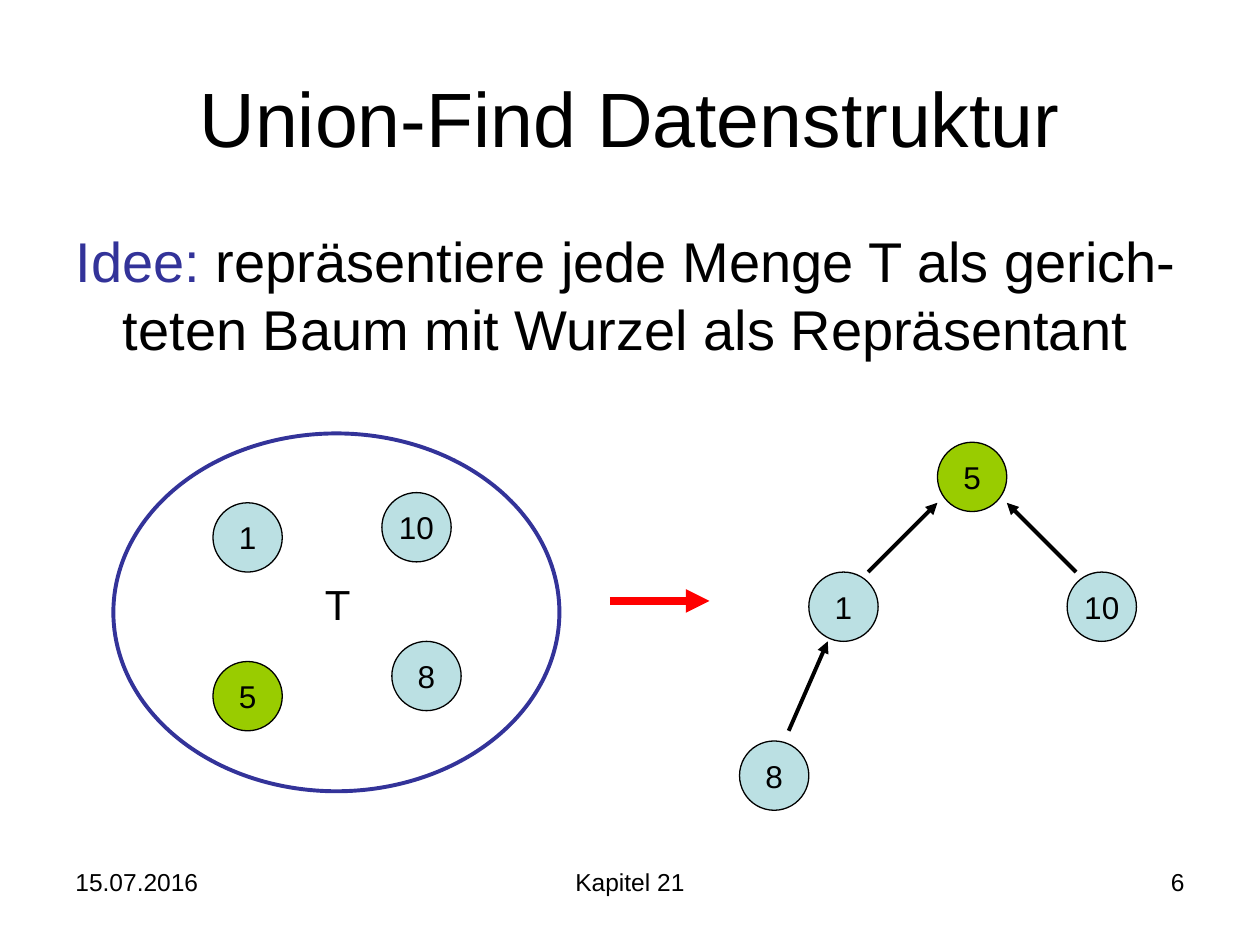
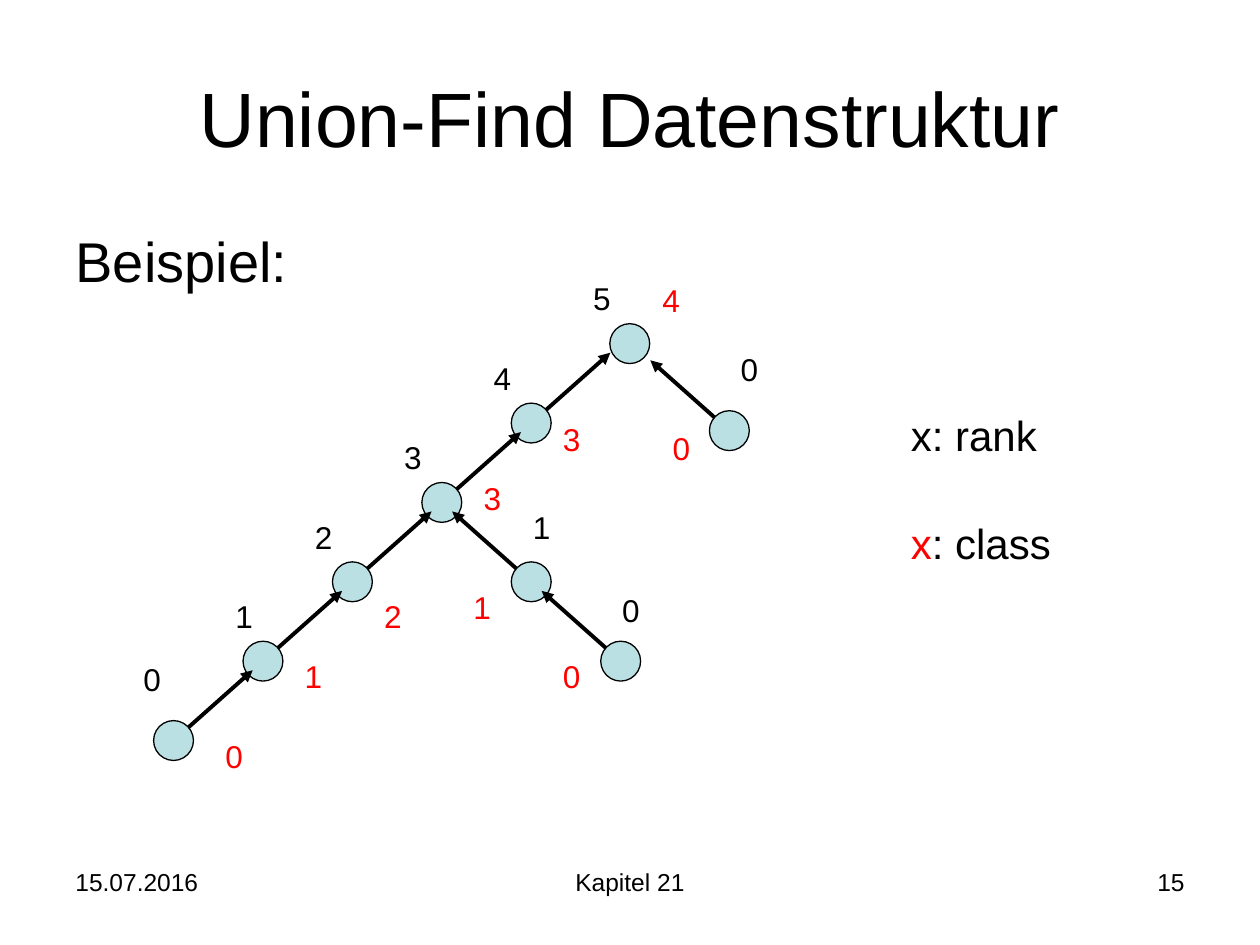
from lxml.etree import SubElement
from pptx import Presentation
from pptx.dml.color import RGBColor
from pptx.enum.shapes import MSO_CONNECTOR, MSO_SHAPE
from pptx.enum.text import MSO_ANCHOR, MSO_AUTO_SIZE, PP_ALIGN as AL
from pptx.oxml.ns import qn
from pptx.util import Pt

FONT = "Arial"
BLACK, RED, BLUE = "000000", "FF0000", "333399"
PALE, GREEN = "BBE0E3", "99CC00"
NODE, DOT = 39.6, 22.8


def rgb(color):
    return RGBColor.from_string(color)


class Deck:
    def __init__(self):
        self.prs = Presentation()
        self.prs.slide_width, self.prs.slide_height = Pt(720), Pt(540)
        self.s = None

    def fill_text(self, tf, text, size, color=BLACK, align=AL.LEFT, rest=""):
        p = tf.paragraphs[0]
        p.text = text
        p.alignment = align
        if rest:
            p.add_run().text = rest
        for r, c in zip(p.runs, (color, BLACK)):
            r.font.name, r.font.size = FONT, Pt(size)
            r.font.color.rgb = rgb(c)
        return p

    def placeholder(self, index, top, height, anchor):
        sp = self.s.placeholders[index]
        sp.left, sp.top, sp.width, sp.height = Pt(36), Pt(top), Pt(648), Pt(height)
        tf = sp.text_frame
        tf.auto_size, tf.vertical_anchor = MSO_AUTO_SIZE.NONE, anchor
        return tf

    def slide(self, number, lead, color=BLACK, rest=""):
        self.s = self.prs.slides.add_slide(self.prs.slide_layouts[1])
        title = self.placeholder(0, 21.6, 90, MSO_ANCHOR.MIDDLE)
        self.fill_text(title, "Union-Find Datenstruktur", 44, align=AL.CENTER)
        body = self.placeholder(1, 126, 356.4, MSO_ANCHOR.TOP)
        p = self.fill_text(body, lead, 32, color, rest=rest)
        pPr = p._p.get_or_add_pPr()
        pPr.set("marL", str(Pt(27)))
        pPr.set("indent", str(Pt(-27)))
        SubElement(pPr, qn("a:buNone"))
        for text, x, w, align in (("15.07.2016", 36, 168, AL.LEFT),
                                  ("Kapitel 21", 246, 228, AL.CENTER),
                                  (str(number), 516, 168, AL.RIGHT)):
            self.text(text, x, 491.8, w, 37.4, 14, align=align, wrap=True)

    def text(self, text, x, y, w, h, size, color=BLACK, align=AL.LEFT, rest="", wrap=False):
        tf = self.s.shapes.add_textbox(Pt(x), Pt(y), Pt(w), Pt(h)).text_frame
        tf.word_wrap = wrap
        tf.auto_size = MSO_AUTO_SIZE.NONE if wrap else MSO_AUTO_SIZE.SHAPE_TO_FIT_TEXT
        self.fill_text(tf, text, size, color, align, rest)

    def label(self, text, at, color=BLACK):
        self.text(text, *at, 24.5, 28.8, 18, color)

    def ellipse(self, x, y, w, h, fill=None, line=BLACK, width=0.75, text=""):
        sp = self.s.shapes.add_shape(MSO_SHAPE.OVAL, Pt(x), Pt(y), Pt(w), Pt(h))
        sp.shadow.inherit = False
        if fill:
            sp.fill.solid()
            sp.fill.fore_color.rgb = rgb(fill)
        else:
            sp.fill.background()
        sp.line.color.rgb, sp.line.width = rgb(line), Pt(width)
        if text:
            tf = sp.text_frame
            tf.word_wrap, tf.vertical_anchor = False, MSO_ANCHOR.MIDDLE
            self.fill_text(tf, text, 18, align=AL.CENTER)

    def arrow(self, x1, y1, x2, y2, color=BLACK, width=2.25):
        c = self.s.shapes.add_connector(MSO_CONNECTOR.STRAIGHT, Pt(x1), Pt(y1), Pt(x2), Pt(y2))
        c.line.color.rgb, c.line.width = rgb(color), Pt(width)
        spPr = c._element.spPr
        SubElement(spPr.find(qn("a:ln")), qn("a:tailEnd"), type="triangle")
        SubElement(spPr, qn("a:effectLst"))


def idea_slide(d):
    d.slide(6, "Idee:", BLUE,
            " repräsentiere jede Menge T als gerich-teten Baum mit Wurzel als Repräsentant")
    members = (("1", 121.7, 287.3), ("10", 218.2, 281.5),
               ("8", 223.9, 366.5), ("5", 121.7, 378))
    tree = (("5", 535.7, 252.7), ("8", 422.6, 423.4),
            ("1", 462.2, 326.9), ("10", 609.8, 326.9))
    for text, x, y in members + tree:
        d.ellipse(x, y, NODE, NODE, GREEN if text == "5" else PALE, text=text)
    d.ellipse(64.8, 247.7, 254.9, 204.5, line=BLUE, width=2.25)
    d.text("T", 178.6, 326.9, 28.8, 36, 24)
    d.arrow(348.5, 343.4, 405.4, 343.4, RED, 4.5)
    for ends in ((496.1, 326.9, 535.7, 287.3), (614.9, 326.9, 575.3, 287.3),
                 (450.7, 417.6, 473, 366.5)):
        d.arrow(*ends)


def example_slide(d):
    d.slide(15, "Beispiel:")

    def grid(col, row):
        return 87.8 + 51.1 * col, 411.8 - 45.36 * row

    nodes = (
        ((348.5, 185), 0, "5", (331.9, 156.2), "4", (371.5, 157)),
        (grid(4, 4), 1, "4", (275, 201.6), "3", (314.6, 236.2)),
        (grid(3, 3), 1, "3", (223.9, 247), "3", (269.3, 270)),
        (grid(2, 2), 1, "2", (172.8, 292.3), "2", (212.4, 337.7)),
        (grid(1, 1), 1, "1", (127.4, 337.7), "1", (167, 372.2)),
        (grid(0, 0), 1, "0", (74.9, 373.7), "0", (121.7, 417.6)),
        ((405.4, 234.7), -1, "0", (416.2, 196.6), "0", (377.3, 241.9)),
        (grid(4, 2), -1, "1", (297.4, 286.6), "1", (263.5, 332.6)),
        (grid(5, 1), -1, "0", (348.5, 334.1), "0", (314.6, 372.2)),
    )
    for (x, y), side, rank, rank_at, cls, cls_at in nodes:
        if side:
            cx, cy = x + DOT / 2, y + DOT / 2
            d.arrow(cx, cy, cx + side * 45.2, cy - 40.2)
        d.ellipse(x, y, DOT, DOT, PALE)
        d.label(rank, rank_at)
        d.label(cls, cls_at, RED)
    d.text("x: rank", 513.4, 230.4, 86.4, 36, 24)
    d.text("x", 513.4, 292.3, 94.3, 36, 24, RED, rest=": class")


def main():
    d = Deck()
    idea_slide(d)
    example_slide(d)
    d.prs.save("out.pptx")


if __name__ == "__main__":
    main()
